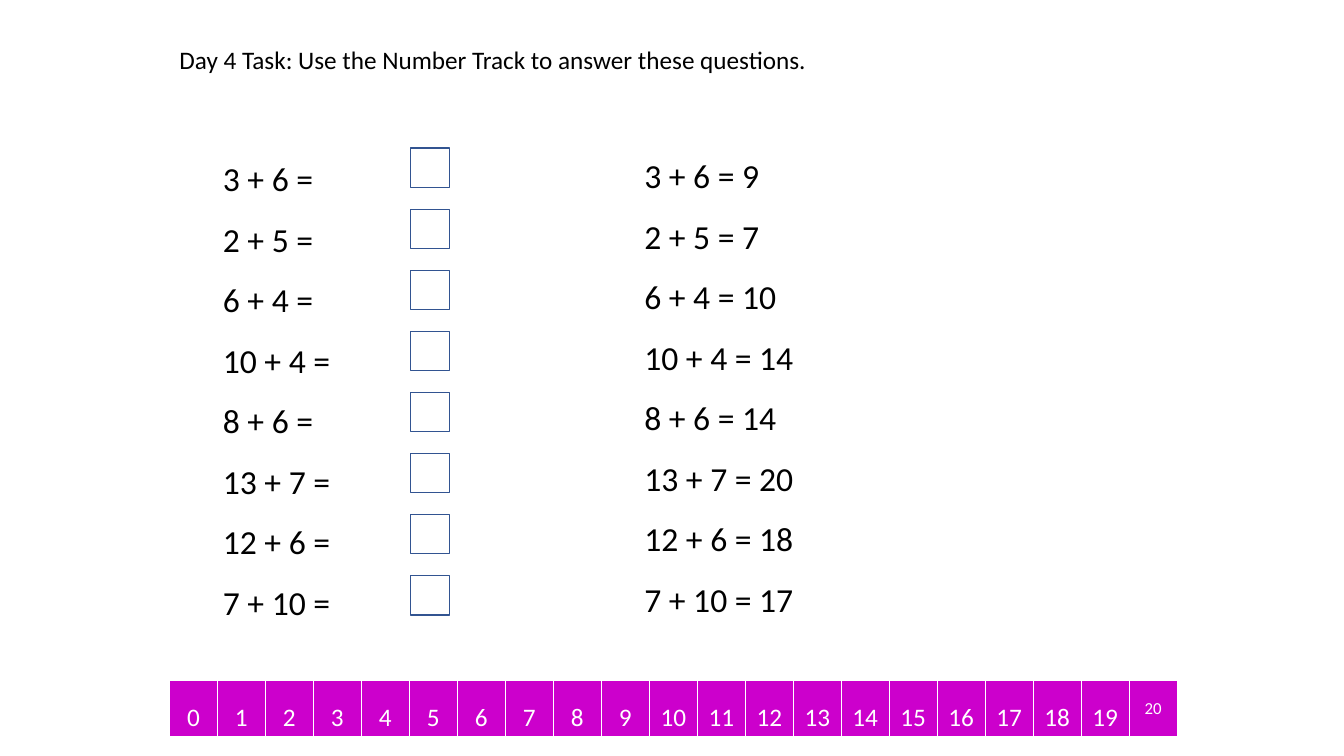
from lxml import etree
from pptx import Presentation
from pptx.dml.color import RGBColor
from pptx.enum.shapes import MSO_SHAPE
from pptx.enum.text import MSO_ANCHOR, MSO_AUTO_SIZE, PP_ALIGN
from pptx.oxml.ns import qn
from pptx.util import Inches, Pt

BLACK = RGBColor(0x00, 0x00, 0x00)
WHITE = RGBColor(0xFF, 0xFF, 0xFF)
MAGENTA = RGBColor(0xCC, 0x00, 0xCC)
BOX_BLUE = RGBColor(0x32, 0x54, 0x91)

TASK = "Day 4 Task: Use the Number Track to answer these questions."
SUMS = [(3, 6), (2, 5), (6, 4), (10, 4), (8, 6), (13, 7), (12, 6), (7, 10)]
LAST_NUMBER = 20
BORDER_WIDTHS = {"lnL": 1, "lnR": 1, "lnT": 1, "lnB": 3}


def format_paragraph(paragraph, size, color, **settings):
    for name, value in settings.items():
        setattr(paragraph, name, value)
    font_values = {"name": "Calibri", "size": Pt(size), "bold": False}
    for name, value in font_values.items():
        setattr(paragraph.font, name, value)
    paragraph.font.color.rgb = color


def place(shape, left, top, width, height):
    box = {"left": left, "top": top, "width": width, "height": height}
    for name, value in box.items():
        setattr(shape, name, Inches(value))


def fill_placeholder(placeholder, box, lines, size, line_spacing):
    """Put plain, unbulleted lines in a template placeholder."""
    place(placeholder, *box)
    frame = placeholder.text_frame
    frame.text = "\n".join(lines)
    frame_values = {"word_wrap": True, "auto_size": MSO_AUTO_SIZE.NONE,
                    "vertical_anchor": MSO_ANCHOR.TOP}
    for name, value in frame_values.items():
        setattr(frame, name, value)
    for paragraph in frame.paragraphs:
        format_paragraph(paragraph, size, BLACK, alignment=PP_ALIGN.LEFT,
                         line_spacing=line_spacing, space_before=Pt(0))
        properties = paragraph._p.get_or_add_pPr()
        properties.set("marL", "0")
        properties.set("indent", "0")
        etree.SubElement(properties, qn("a:buNone"))


def add_answer_boxes(slide, left, top, height, side=0.39):
    """Spread one empty square per sum evenly down the given height."""
    pitch = (height - side) / (len(SUMS) - 1)
    for index in range(len(SUMS)):
        square = slide.shapes.add_shape(
            MSO_SHAPE.RECTANGLE, Inches(left), Inches(top + index * pitch),
            Inches(side), Inches(side))
        square.shadow.inherit = False
        square.fill.background()
        square.line.color.rgb = BOX_BLUE
        square.line.width = Pt(1)


def add_cell_borders(cell):
    properties = cell._tc.get_or_add_tcPr()
    for tag, width in BORDER_WIDTHS.items():
        border = etree.SubElement(properties, qn(f"a:{tag}"), w=str(Pt(width)))
        fill = etree.SubElement(border, qn("a:solidFill"))
        etree.SubElement(fill, qn("a:srgbClr"), val=str(WHITE))


def add_number_track(slide, left, top, width, height):
    count = LAST_NUMBER + 1
    table = slide.shapes.add_table(
        1, count, Inches(left), Inches(top), Inches(width), Inches(height)).table
    table.first_row = False
    table.horz_banding = False
    for number in range(count):
        table.columns[number].width = Inches(width / count)
        is_last = number == LAST_NUMBER
        cell = table.cell(0, number)
        add_cell_borders(cell)
        cell.fill.solid()
        cell.fill.fore_color.rgb = MAGENTA
        cell.vertical_anchor = MSO_ANCHOR.MIDDLE if is_last else MSO_ANCHOR.BOTTOM
        cell.text = str(number)
        format_paragraph(cell.text_frame.paragraphs[0], 12 if is_last else 18,
                         WHITE, alignment=PP_ALIGN.CENTER)


def build_task_slide(presentation):
    slide = presentation.slides.add_slide(presentation.slide_layouts[3])
    title, questions, answers = slide.placeholders

    # Task heading
    fill_placeholder(title, (1.68, 0.39, 10.42, 0.4), [TASK], 18, 1.0)

    # Questions with answer boxes, and the worked answers
    fill_placeholder(questions, (2.11, 1.32, 2.44, 5.35),
                     [f"{a} + {b} =" for a, b in SUMS], 24, 1.5)
    fill_placeholder(answers, (6.29, 1.29, 3.62, 5.35),
                     [f"{a} + {b} = {a + b}" for a, b in SUMS], 24, 1.5)
    add_answer_boxes(slide, 4.07, 1.47, 4.63)

    # Number track
    add_number_track(slide, 1.68, 6.75, 10, 0.57)


def main():
    presentation = Presentation()
    presentation.slide_width = Inches(13.33)
    presentation.slide_height = Inches(7.5)
    build_task_slide(presentation)
    presentation.save("out.pptx")


if __name__ == "__main__":
    main()
